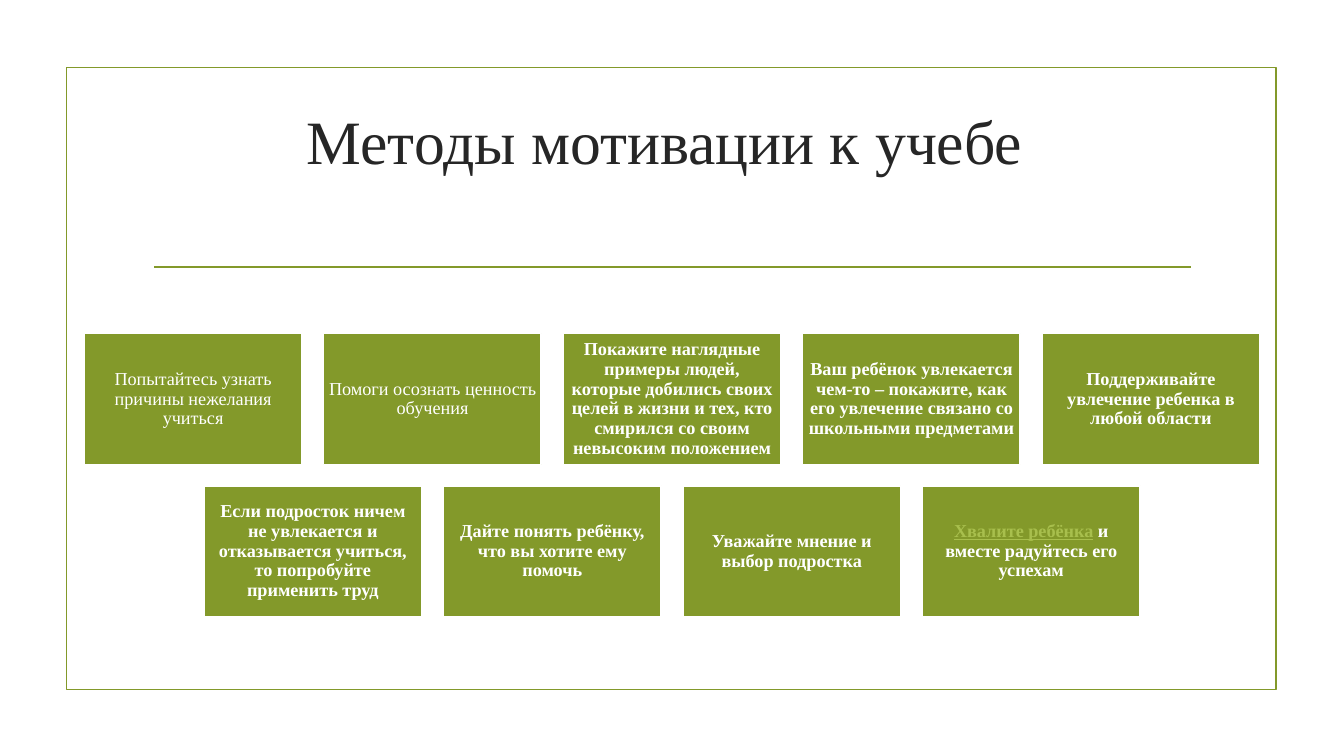
"""Build the slide on ways to motivate pupils to study."""
import dataclasses
import typing

import lxml.etree
import pptx
import pptx.dml.color
import pptx.enum.shapes
import pptx.enum.text
import pptx.oxml.ns
import pptx.util

WIDE, HIGH = 13.33, 7.5
CARD_W, CARD_H = 2.16, 1.3
COL, ROW = 2.375, 1.51
TOP = 3.31
GREEN, LIME, WHITE, DARK = "83992A", "A8BF4D", "FFFFFF", "262626"
FONT = "Times New Roman"


@dataclasses.dataclass(frozen=True)
class Card:
    """A method of motivation, with an optional underlined start."""
    text: str
    bold: bool = True
    lead: str = ""


ROWS = (
    (
        Card("Попытайтесь узнать причины нежелания учиться", bold=False),
        Card("Помоги осознать ценность обучения", bold=False),
        Card("Покажите наглядные примеры людей, которые добились своих целей "
             "в жизни и тех, кто смирился со своим невысоким положением"),
        Card("Ваш ребёнок увлекается чем-то – покажите, как его увлечение "
             "связано со школьными предметами"),
        Card("Поддерживайте увлечение ребенка в любой области"),
    ),
    (
        Card("Если подросток ничем не увлекается и отказывается учиться, "
             "то попробуйте применить труд"),
        Card("Дайте понять ребёнку, что вы хотите ему помочь"),
        Card("Уважайте мнение и выбор подростка"),
        Card(" и вместе радуйтесь его успехам", lead="Хвалите ребёнка"),
    ),
)


def tint(code: str) -> pptx.dml.color.RGBColor:
    """Turn a hex string into a colour."""
    return pptx.dml.color.RGBColor.from_string(code)


def inch(*sizes: float) -> list[pptx.util.Length]:
    """Turn numbers of inches into lengths."""
    return [pptx.util.Inches(size) for size in sizes]


def write(para: typing.Any, text: str, *, size: float = 13, color: str = WHITE,
          bold: bool = False, under: bool = False) -> None:
    """Add a formatted run to a paragraph."""
    run = para.add_run()
    run.text = text
    font = run.font
    font.name, font.size = FONT, pptx.util.Pt(size)
    font.bold, font.underline = bold, under
    font.color.rgb = tint(color)


def center(frame: typing.Any) -> typing.Any:
    """Centre a text frame both ways and return its paragraph."""
    frame.word_wrap = True
    frame.auto_size = pptx.enum.text.MSO_AUTO_SIZE.NONE
    frame.vertical_anchor = pptx.enum.text.MSO_ANCHOR.MIDDLE
    para = frame.paragraphs[0]
    para.alignment = pptx.enum.text.PP_ALIGN.CENTER
    return para


def draw_box(slide: typing.Any, left: float, top: float, width: float,
             height: float, edge: str, fill: str = "") -> typing.Any:
    """Draw a rectangle, hollow unless a fill is given."""
    box = slide.shapes.add_shape(pptx.enum.shapes.MSO_SHAPE.RECTANGLE,
                                 *inch(left, top, width, height))
    box.shadow.inherit = False
    if fill:
        box.fill.solid()
        box.fill.fore_color.rgb = tint(fill)
    else:
        box.fill.background()
    box.line.color.rgb = tint(edge)
    box.line.width = pptx.util.Pt(1.25)
    return box


def draw_rule(slide: typing.Any, left: float, right: float, top: float) -> None:
    """Draw a level line without a shadow."""
    rule = slide.shapes.add_connector(pptx.enum.shapes.MSO_CONNECTOR.STRAIGHT,
                                      *inch(left, top, right, top))
    rule.line.color.rgb = tint(GREEN)
    rule.line.width = pptx.util.Pt(1.25)
    props = rule._element.spPr
    lxml.etree.SubElement(props, pptx.oxml.ns.qn("a:effectLst"))


def draw_title(slide: typing.Any, text: str) -> None:
    """Place and fill the title."""
    title = slide.shapes.title
    title.left, title.top, title.width, title.height = inch(1.42, 0.67, 10.5, 1.43)
    write(center(title.text_frame), text, size=44, color=DARK)


def draw_card(slide: typing.Any, card: Card, left: float, top: float) -> None:
    """Draw a card with its text."""
    box = draw_box(slide, left, top, CARD_W, CARD_H, WHITE, GREEN)
    frame = box.text_frame
    frame.margin_left, frame.margin_top, frame.margin_right, frame.margin_bottom = inch(
        0.05, 0.05, 0.05, 0.05)
    para = center(frame)
    para.line_spacing = 0.9
    if card.lead:
        write(para, card.lead, color=LIME, bold=card.bold, under=True)
    write(para, card.text, bold=card.bold)


def main() -> None:
    """Build and save the deck."""
    deck = pptx.Presentation()
    deck.slide_width, deck.slide_height = inch(WIDE, HIGH)
    slide = deck.slides.add_slide(deck.slide_layouts[5])
    draw_box(slide, 0.66, 0.67, 12, 6.17, GREEN)
    draw_rule(slide, 1.53, 11.81, 2.65)
    draw_title(slide, "Методы мотивации к учебе ")
    for row, cards in enumerate(ROWS):
        start = (WIDE - COL * (len(cards) - 1) - CARD_W) / 2
        for col, card in enumerate(cards):
            draw_card(slide, card, start + col * COL, TOP + row * ROW)
    deck.save("out.pptx")


if __name__ == "__main__":
    main()
